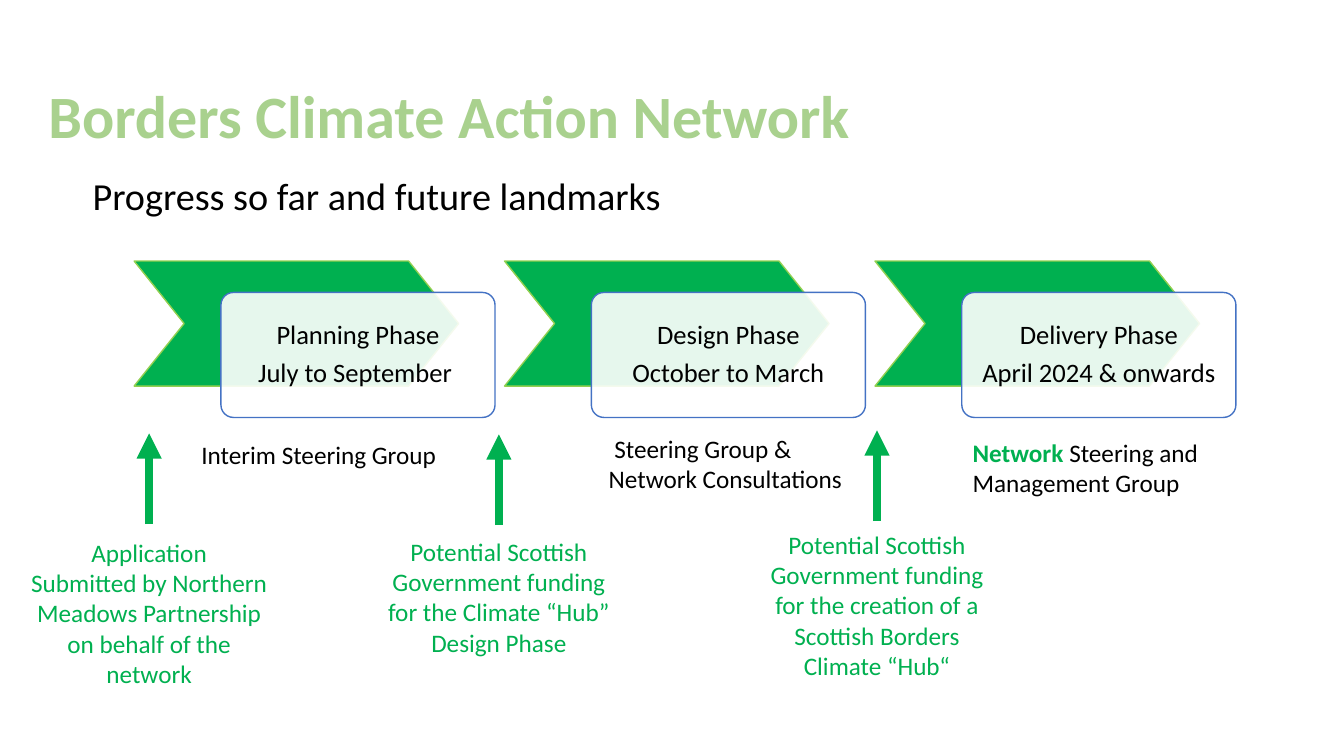
from pptx import Presentation
from pptx.dml.color import RGBColor
from pptx.enum.shapes import MSO_CONNECTOR as CONNECTOR, MSO_SHAPE as SHAPE
from pptx.enum.text import MSO_ANCHOR as ANCHOR, MSO_AUTO_SIZE as AUTO_SIZE, PP_ALIGN as ALIGN
from pptx.oxml.ns import qn
from pptx.util import Pt
from lxml.etree import SubElement

FONT = "Calibri"
COLOURS = {
    "green": "00B050",
    "lime": "92D050",
    "title": "A9D18E",
    "blue": "4472C4",
    "white": "FFFFFF",
    "black": "000000",
}

# Phases from left to right, at an equal pitch
PHASE_LEFT, PHASE_TOP, PHASE_PITCH = 95.8, 186.5, 264.6
PHASES = [
    ["Planning Phase", "July to September "],
    ["Design Phase", "October to March"],
    ["Delivery Phase", "April 2024 & onwards"],
]

# Box (left, top, width, height) and runs (text, colour, bold)
GROUPS = [
    ((136.8, 310.3, 189.4, 29), [("Interim Steering Group", "black", False)]),
    ((427.7, 306, 187.9, 51), [(" Steering Group & Network Consultations", "black", False)]),
    ((687.6, 308.9, 190, 51), [("Network ", "green", True),
                               ("Steering and Management Group", "black", False)]),
]

# Box of arrow and caption, caption offset from its top, and paragraphs
MILESTONES = [
    ((15.1, 309.6, 182.9, 187.2), 70.6,
     ["Application\vSubmitted by Northern Meadows Partnership on behalf of the network"]),
    ((264.9, 310.3, 182.9, 163.4), 69.1,
     ["Potential Scottish Government funding for the Climate “Hub” Design Phase"]),
    ((535, 307.4, 182.9, 183.6), 67,
     ["Potential Scottish Government funding",
      "for the creation of a Scottish Borders Climate “Hub“"]),
]


def rgb(name):
    return RGBColor.from_string(COLOURS[name])


def points(*values):
    return [Pt(value) for value in values]


def format_run(run, size, colour, bold=False):
    run.font.name = FONT
    run.font.size = Pt(size)
    run.font.bold = bold
    run.font.color.rgb = rgb(colour)


def fill_text(text_frame, paragraphs, size, colour, bold=False, align=ALIGN.LEFT,
              line_spacing=1.0, space_after=0):
    text_frame.word_wrap = True
    text_frame.text = "\n".join(paragraphs)
    for paragraph in text_frame.paragraphs:
        paragraph.alignment = align
        paragraph.line_spacing = line_spacing
        paragraph.space_before = Pt(0)
        paragraph.space_after = Pt(space_after)
        for run in paragraph.runs:
            format_run(run, size, colour, bold)


def add_heading(placeholder, box, text, size, colour, bold):
    placeholder.left, placeholder.top, placeholder.width, placeholder.height = points(*box)
    text_frame = placeholder.text_frame
    fill_text(text_frame, [text], size, colour, bold, line_spacing=0.9)
    text_frame.auto_size = AUTO_SIZE.NONE
    text_frame.vertical_anchor = ANCHOR.MIDDLE


def add_outlined(slide, kind, box, adjustment, fill, line):
    shape = slide.shapes.add_shape(kind, *points(*box))
    shape.adjustments[0] = adjustment
    shape.shadow.inherit = False
    shape.fill.solid()
    shape.fill.fore_color.rgb = rgb(fill)
    shape.line.color.rgb = rgb(line)
    shape.line.width = Pt(1)
    return shape


def add_phase(slide, box, lines):
    left, top, width, height = box
    add_outlined(slide, SHAPE.CHEVRON, box, 0.4, "green", "lime")

    # Translucent card over the lower right of the chevron
    card_box = (left + 62, top + 22.4, width - 36, height)
    card = add_outlined(slide, SHAPE.ROUNDED_RECTANGLE, card_box, 0.1, "white", "blue")
    fill_colour = card.fill._xPr.find(qn("a:solidFill"))[0]
    SubElement(fill_colour, qn("a:alpha"), val="90000")

    text_frame = card.text_frame
    text_frame.margin_left = text_frame.margin_right = Pt(10.8)
    text_frame.margin_top = text_frame.margin_bottom = Pt(10.8)
    text_frame.vertical_anchor = ANCHOR.MIDDLE
    fill_text(text_frame, lines, 19, "black", align=ALIGN.CENTER,
              line_spacing=0.9, space_after=6.65)


def add_group(slide, box, runs):
    text_frame = slide.shapes.add_textbox(*points(*box)).text_frame
    text_frame.word_wrap = True
    for text, colour, bold in runs:
        run = text_frame.paragraphs[0].add_run()
        run.text = text
        format_run(run, 18, colour, bold)


def add_milestone(slide, box, caption_offset, paragraphs):
    left, top, width, height = box

    # Arrow pointing up, centred over the caption
    middle = left + width / 2
    arrow = slide.shapes.add_connector(
        CONNECTOR.STRAIGHT, *points(middle, top + 64.8, middle, top))
    arrow.line.color.rgb = rgb("green")
    arrow.line.width = Pt(6)
    SubElement(arrow.line._get_or_add_ln(), qn("a:tailEnd"), type="triangle")
    SubElement(arrow._element.spPr, qn("a:effectLst"))

    # Caption
    caption = slide.shapes.add_textbox(
        *points(left, top + caption_offset, width, height - caption_offset))
    fill_text(caption.text_frame, paragraphs, 18, "green", align=ALIGN.CENTER)


def build_slide(presentation):
    slide = presentation.slides.add_slide(presentation.slide_layouts[0])

    # Title and subtitle
    title, subtitle = slide.placeholders
    add_heading(title, (27.4, 50.4, 932.6, 69), "Borders Climate Action Network",
                42.9, "title", True)
    add_heading(subtitle, (59, 107.3, 901, 69), "Progress so far and future landmarks",
                27.3, "black", False)

    # Timeline
    for index, lines in enumerate(PHASES):
        add_phase(slide, (PHASE_LEFT + index * PHASE_PITCH, PHASE_TOP, 231.8, 89.3), lines)
    for box, runs in GROUPS:
        add_group(slide, box, runs)
    for milestone in MILESTONES:
        add_milestone(slide, *milestone)


def main():
    presentation = Presentation()
    presentation.slide_width, presentation.slide_height = points(960, 540)
    build_slide(presentation)
    presentation.save("out.pptx")


if __name__ == "__main__":
    main()
